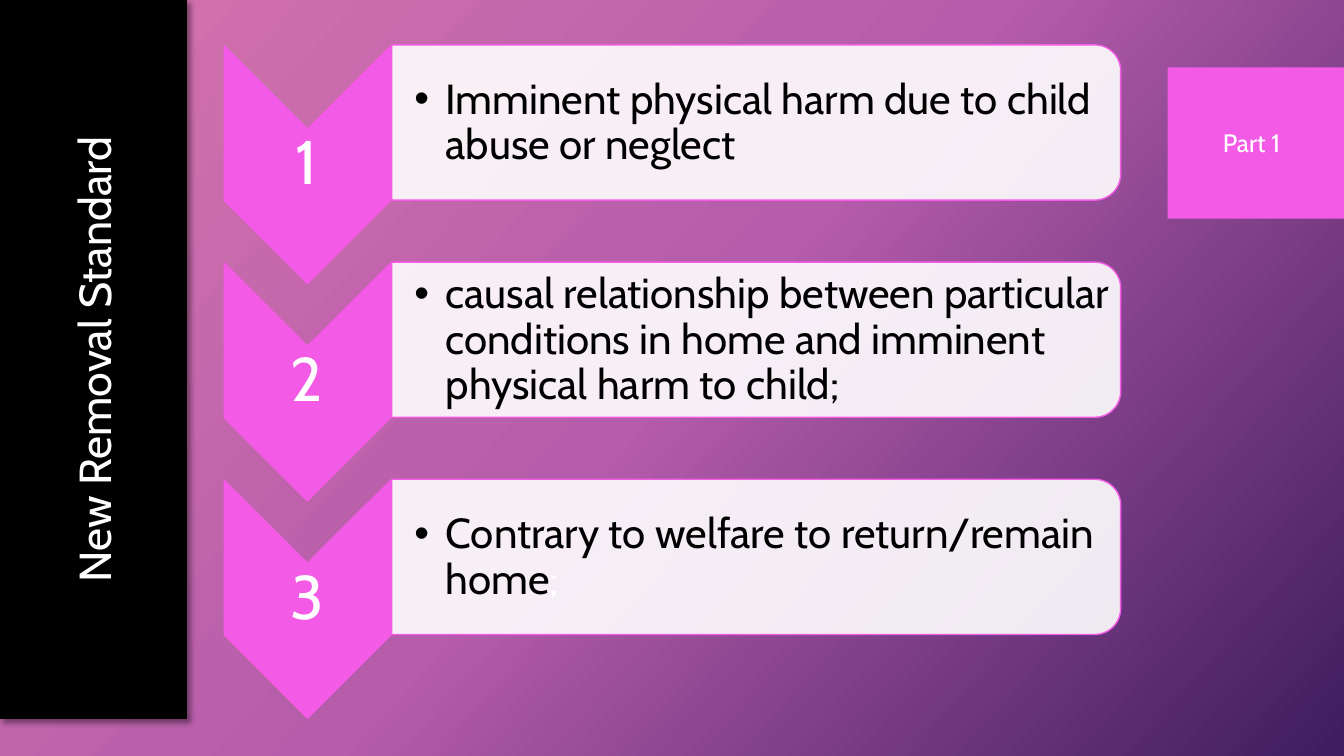
from lxml import etree
from pptx import Presentation, util as u
from pptx.dml.color import RGBColor
from pptx.enum import shapes, text
from pptx.oxml import parse_xml
from pptx.oxml.ns import nsdecls, qn

WIDTH, HEIGHT = u.Inches(13.33), u.Inches(7.5)
FONT = "Cabin"
STEP_PITCH = 28.73
COLORS = {"pink": "F35AE6", "white": "FFFFFF", "black": "000000",
          "rose": "D774AD", "orchid": "B55CAB", "plum": "3E1C5F"}
STEPS = [
    [("Imminent physical harm due to child abuse or neglect", "black")],
    [("causal relationship between particular conditions in home "
      "and imminent physical harm to child;", "black")],
    [("Contrary to welfare to return/remain home", "black"), (";", "white")],
]


def place(left, top, width, height):
    """Turn percentages of the slide into lengths."""
    return [u.Emu(round(share * side / 100)) for share, side in
            zip((left, top, width, height), (WIDTH, HEIGHT) * 2)]


def paint_background(slide):
    """Fill the slide with its diagonal three-colour gradient."""
    stops = "".join(
        f'<a:gs pos="{pos}"><a:srgbClr val="{COLORS[name]}"/></a:gs>'
        for pos, name in ((0, "rose"), (50000, "orchid"), (100000, "plum")))
    slide.background.fill.solid()
    properties = slide._element.cSld.find(qn("p:bg")).find(qn("p:bgPr"))
    properties.replace(properties[0], parse_xml(
        f'<a:gradFill {nsdecls("a")} rotWithShape="1"><a:gsLst>{stops}</a:gsLst>'
        '<a:lin ang="2520000" scaled="0"/></a:gradFill>'))


def add_block(slide, preset, area, fill, line=None, rotation=0, alpha=None):
    """Add a flat preset shape."""
    block = slide.shapes.add_shape(preset, *place(*area))
    block.shadow.inherit = False
    block.rotation = rotation
    block.fill.solid()
    block.fill.fore_color.rgb = RGBColor.from_string(COLORS[fill])
    if alpha:
        color = block._element.spPr.find(qn("a:solidFill"))[0]
        etree.SubElement(color, qn("a:alpha"), val=str(alpha * 1000))
    if line:
        block.line.color.rgb = RGBColor.from_string(COLORS[line])
        block.line.width = u.Pt(1)
    else:
        block.line.fill.background()
    return block


def cast_shadow(block):
    """Give a block a soft shadow to the lower right."""
    effects = block._element.spPr.find(qn("a:effectLst"))
    effects.append(parse_xml(
        f'<a:outerShdw {nsdecls("a")} blurRad="{u.Pt(4)}" dist="{u.Pt(3)}" '
        f'dir="2700000" algn="tl" rotWithShape="0"><a:srgbClr val="{COLORS["black"]}">'
        '<a:alpha val="40000"/></a:srgbClr></a:outerShdw>'))


def add_bullet(paragraph, indent):
    """Give a paragraph a hanging round bullet."""
    properties = paragraph._p.get_or_add_pPr()
    properties.set("marL", str(u.Inches(indent)))
    properties.set("indent", str(-u.Inches(indent)))
    etree.SubElement(properties, qn("a:buFont"), typeface="Arial")
    etree.SubElement(properties, qn("a:buChar"), char="•")


def write(holder, runs, size, align="LEFT", anchor="MIDDLE", insets=None,
          bullet=None, spacing=None, wrap=True, direction=None):
    """Write (words, colour) runs as one formatted paragraph."""
    frame = holder.text_frame
    frame.word_wrap = wrap
    frame.vertical_anchor = getattr(text.MSO_ANCHOR, anchor)
    if insets:
        (frame.margin_left, frame.margin_top, frame.margin_right,
         frame.margin_bottom) = map(u.Inches, insets)
    if direction:
        frame._txBody.bodyPr.set("vert", direction)
    paragraph = frame.paragraphs[0]
    if bullet:
        add_bullet(paragraph, bullet)
    paragraph.alignment = getattr(text.PP_ALIGN, align)
    if spacing:
        paragraph.line_spacing = spacing
    for words, color in runs:
        run = paragraph.add_run()
        run.text = words
        run.font.name, run.font.size = FONT, u.Pt(size)
        run.font.color.rgb = RGBColor.from_string(COLORS[color])


def add_words(slide, area, runs, **formatting):
    """Add a text box holding the given runs."""
    write(slide.shapes.add_textbox(*place(*area)), runs, **formatting)


def add_step(slide, index, criterion):
    """Add one numbered chevron with its criterion card."""
    drop = index * STEP_PITCH
    kinds = shapes.MSO_SHAPE
    add_block(slide, kinds.CHEVRON, (14.03, 10.8 + drop, 17.7, 22),
              "pink", line="pink", rotation=90)
    add_words(slide, (16.65, 17.07 + drop, 12.38, 9.47),
              [(str(index + 1), "white")], size=44, align="CENTER",
              insets=[0.03] * 4, spacing=0.9)
    add_block(slide, kinds.ROUND_2_SAME_RECTANGLE,
              (50.49, -32 + drop, 11.55, 96.4),
              "white", line="pink", rotation=90, alpha=90)
    add_words(slide, (29.11, 7.07 + drop, 53.71, 18.53), criterion, size=30,
              insets=(0.23, 0.02, 0.02, 0.02), bullet=0.31, spacing=0.9)


def main():
    """Build the slide and save it."""
    deck = Presentation()
    deck.slide_width, deck.slide_height = WIDTH, HEIGHT
    slide = deck.slides.add_slide(deck.slide_layouts[6])
    paint_background(slide)
    rectangle = shapes.MSO_SHAPE.RECTANGLE
    add_block(slide, rectangle, (86.87, 8.93, 13.13, 20), "pink")
    for index, criterion in enumerate(STEPS):
        add_step(slide, index, criterion)
    title_band = add_block(slide, rectangle, (0, 0, 13.88, 95.07),
                           "black", line="black")
    cast_shadow(title_band)
    write(title_band, [("New Removal Standard", "white")], size=32,
          align="CENTER", direction="vert270")
    add_words(slide, (90.25, 16.13, 7.05, 5.33), [("Part 1", "white")],
              size=18, anchor="TOP", wrap=False)
    deck.save("out.pptx")


if __name__ == "__main__":
    main()
